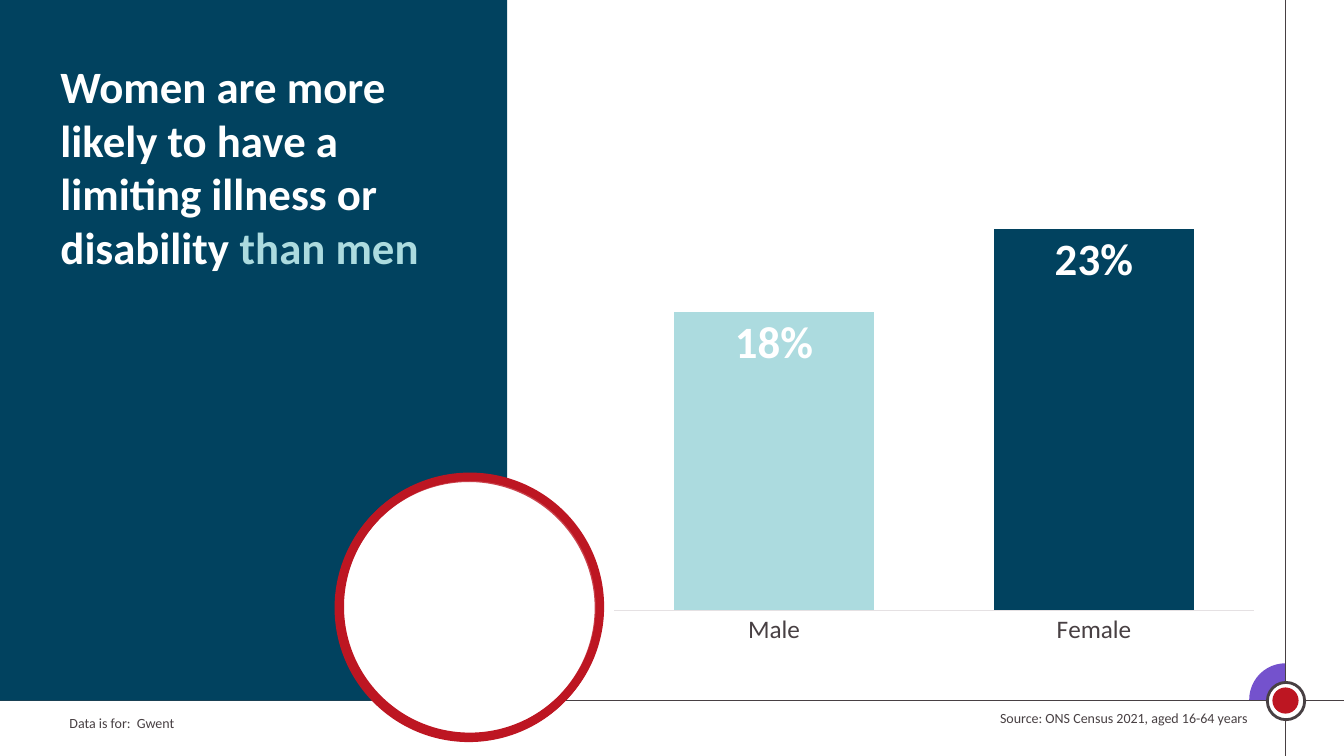
from lxml import etree
from pptx import Presentation
from pptx import util as u
from pptx.chart.data import CategoryChartData
from pptx.dml.color import RGBColor
from pptx.enum import chart as c, shapes as s, text as t
from pptx.oxml.ns import qn

PX = 9144  # 100 px to the inch
WIDTH, HEIGHT = 1333, 750
FONT = "Calibri"
WHITE = RGBColor(0xFF, 0xFF, 0xFF)
INK = RGBColor(0x48, 0x40, 0x43)
NAVY = RGBColor(0x01, 0x42, 0x5F)
AQUA = RGBColor(0xAC, 0xDB, 0xDF)
RED = RGBColor(0xBD, 0x16, 0x22)
PURPLE = RGBColor(0x74, 0x52, 0xCD)
RULE_GREY = RGBColor(0xE5, 0xE1, 0xE3)
CROSS_X, CROSS_Y = 1275, 695


def px(*lengths):
    return [u.Emu(length * PX) for length in lengths]


def style(font, size, color, bold=False):
    font.name, font.size, font.bold = FONT, u.Pt(size), bold
    font.color.rgb = color


def add_shape(page, kind, area, fill, line=None, weight=0):
    shape = page.shapes.add_shape(kind, *px(*area))
    shape.shadow.inherit = False
    shape.fill.solid()
    shape.fill.fore_color.rgb = fill
    if line is None:
        shape.line.fill.background()
    else:
        shape.line.color.rgb = line
        shape.line.width = u.Pt(weight)
    return shape


def add_disc(page, center_x, center_y, size, *paint):
    area = (center_x - size // 2, center_y - size // 2, size, size)
    return add_shape(page, s.MSO_SHAPE.OVAL, area, *paint)


def set_alpha(shape, percent):
    color = shape.fill._xPr.find(qn("a:solidFill"))[0]
    etree.SubElement(color, qn("a:alpha")).set("val", str(percent * 1000))


def add_rule(page, *ends):
    rule = page.shapes.add_connector(s.MSO_CONNECTOR.STRAIGHT, *px(*ends))
    rule.line.color.rgb = INK
    rule.line.width = u.Pt(1)
    etree.SubElement(rule._element.spPr, qn("a:effectLst"))


def add_note(page, area, words, align=t.PP_ALIGN.LEFT):
    box = page.shapes.add_textbox(*px(*area))
    box.text_frame.word_wrap = True
    para = box.text_frame.paragraphs[0]
    para.text, para.alignment = words, align
    style(para.font, 10, INK)


def add_title(page):
    """Fill the title placeholder and bring it in front of the panel."""
    title = page.shapes.title
    title.left, title.top, title.width, title.height = px(50, 53, 422, 279)
    frame = title.text_frame
    frame.word_wrap = True
    frame.auto_size = t.MSO_AUTO_SIZE.NONE
    frame.vertical_anchor = t.MSO_ANCHOR.TOP
    para = frame.paragraphs[0]
    para.alignment, para.line_spacing = t.PP_ALIGN.LEFT, 1.0
    para.space_before = u.Pt(0)
    style(para.font, 32, WHITE, True)
    para.add_run().text = "Women are more likely to have a limiting illness or disability "
    span = para.add_run()
    span.text = "than men"
    span.font.color.rgb = AQUA
    page.shapes._spTree.append(title._element)


def add_illness_chart(page):
    data = CategoryChartData(number_format="0%")
    data.categories = ["Male", "Female"]
    data.add_series("Series 1", (0.18, 0.23))
    chart = page.shapes.add_chart(
        c.XL_CHART_TYPE.COLUMN_CLUSTERED, *px(596, 185, 661, 464), data).chart
    chart.has_legend = chart.has_title = False
    style(chart.font, 16, INK)

    values = chart.value_axis
    values.minimum_scale, values.maximum_scale = 0, 0.25
    values.has_major_gridlines = values.visible = False
    categories = chart.category_axis
    categories.major_tick_mark = c.XL_TICK_MARK.NONE
    categories.format.line.color.rgb = RULE_GREY
    categories.format.line.width = u.Pt(0.75)
    style(categories.tick_labels.font, 18, INK)

    plot = chart.plots[0]
    plot.gap_width, plot.vary_by_categories = 60, False
    for index, color in enumerate((AQUA, NAVY)):
        fill = plot.series[0].points[index].format.fill
        fill.solid()
        fill.fore_color.rgb = color
    labels = plot.series[0].data_labels
    labels.show_value = True
    labels.position = c.XL_LABEL_POSITION.INSIDE_END
    labels.number_format, labels.number_format_is_linked = "0%", False
    style(labels.font, 32, WHITE, True)


def add_crosshair(page):
    pie = add_shape(page, s.MSO_SHAPE.PIE, (CROSS_X - 36, CROSS_Y - 37, 72, 72), PURPLE)
    pie.adjustments[0], pie.adjustments[1] = 106.62, 162
    add_rule(page, CROSS_X, 0, CROSS_X, HEIGHT)
    add_rule(page, 0, CROSS_Y, WIDTH, CROSS_Y)
    add_disc(page, CROSS_X, CROSS_Y, 37, WHITE, INK, 2)
    add_disc(page, CROSS_X, CROSS_Y, 26, RED)


def main():
    deck = Presentation()
    deck.slide_width, deck.slide_height = px(WIDTH, HEIGHT)
    page = deck.slides.add_slide(deck.slide_layouts[5])
    add_note(page, (59, 704, 439, 27), "Data is for:\u00a0 Gwent".replace("\u00a0", " "))
    add_crosshair(page)
    add_shape(page, s.MSO_SHAPE.RECTANGLE, (0, 0, 503, CROSS_Y), NAVY)
    add_disc(page, 465, 603, 258, WHITE, RED, 6)
    add_note(page, (952, 699, 295, 27), "Source: ONS Census 2021, aged 16-64 years",
             t.PP_ALIGN.RIGHT)
    set_alpha(add_disc(page, 466, 602, 258, WHITE, RED, 6), 20)
    add_title(page)
    add_illness_chart(page)
    deck.save("out.pptx")


if __name__ == "__main__":
    main()
